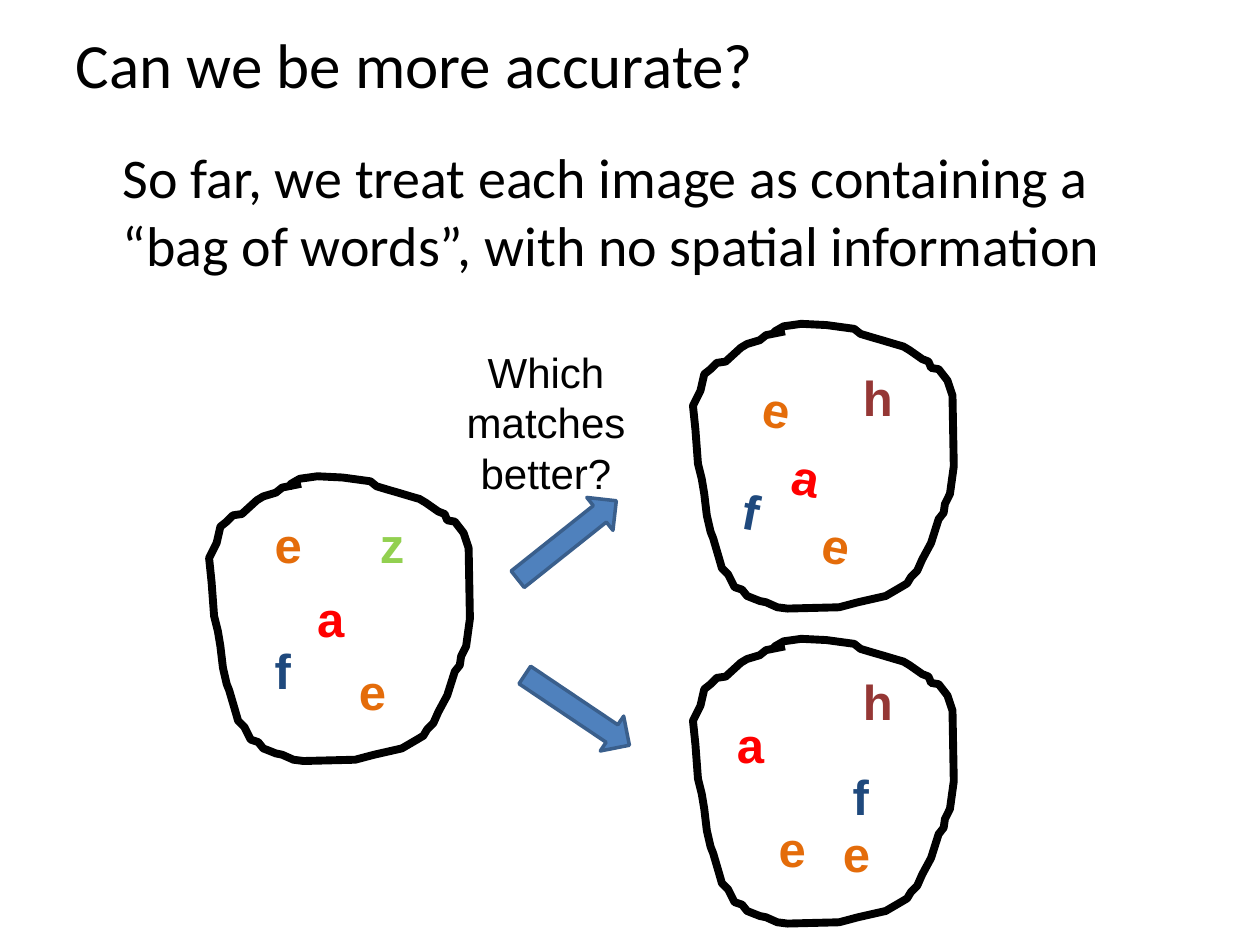
from pptx import Presentation
from pptx.dml.color import RGBColor
from pptx.enum.shapes import MSO_SHAPE
from pptx.enum.text import MSO_ANCHOR, MSO_AUTO_SIZE, PP_ALIGN
from pptx.util import Pt

BLACK = RGBColor(0x00, 0x00, 0x00)
RED = RGBColor(0xFF, 0x00, 0x00)
NAVY = RGBColor(0x1F, 0x49, 0x7D)
GREEN = RGBColor(0x92, 0xD0, 0x50)
ORANGE = RGBColor(0xE4, 0x6C, 0x0A)
MAROON = RGBColor(0x95, 0x37, 0x35)
BLUE = RGBColor(0x4F, 0x81, 0xBD)
BLUE_EDGE = RGBColor(0x3A, 0x5F, 0x8C)

TITLE = "Can we be more accurate?"
BODY = ("So far, we treat each image as containing a “bag of words”, "
        "with no spatial information")
QUESTION = "Which matches better?"

# Visual word: colour, box width
WORDS = {"a": (RED, 30.2), "e": (ORANGE, 30.2), "f": (NAVY, 23.8),
         "h": (MAROON, 31.7), "z": (GREEN, 28.8)}
TILT = 10.9

# Each bag: left, top, then its words as (letter, left, top, rotation)
BAGS = [
    (119.5, 269.3, [("a", 174.2, 332.6, 0), ("f", 149.8, 362.2, 0),
                    ("z", 210, 290.2, 0), ("e", 198, 374.4, 0),
                    ("e", 149.8, 290.2, 0)]),
    (396, 182.2, [("a", 446.4, 252, TILT), ("f", 418.3, 271.4, TILT),
                  ("e", 463.7, 290.9, TILT), ("e", 429.8, 213.1, TILT),
                  ("h", 486, 206.6, 0)]),
    (396, 362.2, [("a", 414, 404.6, 0), ("f", 480.2, 434.2, 0),
                  ("e", 474.5, 467.3, 0), ("e", 437.8, 464.4, 0),
                  ("h", 486, 380.2, 0)]),
]

# Hand-drawn bag outline, in units of OUTLINE_UNIT points
OUTLINE_UNIT = 0.72
OUTLINE = [
    (73, 10), (58, 13), (53, 17), (43, 20), (38, 23), (26, 34), (19, 35),
    (14, 40), (9, 44), (6, 57), (0, 69), (2, 88), (4, 115), (7, 127),
    (9, 139), (11, 156), (14, 169), (16, 174), (21, 191), (23, 198),
    (28, 203), (33, 213), (39, 215), (43, 220), (53, 224), (58, 225),
    (67, 229), (75, 230), (116, 229), (131, 225), (153, 220), (165, 213),
    (170, 210), (173, 205), (178, 200), (182, 191), (189, 178), (195, 159),
    (199, 154), (200, 147), (204, 139), (207, 117), (206, 61), (202, 49),
    (195, 40), (189, 39), (187, 34), (182, 32), (172, 25), (167, 22),
    (160, 20), (150, 17), (143, 15), (133, 12), (128, 8), (106, 5),
    (86, 4), (72, 6), (65, 10), (63, 13),
]

ARROWS = [(288, 296.6, 321.5), (293.8, 393.8, 33.9)]  # left, top, rotation


def place(shape, left, top, width, height):
    box = {"left": left, "top": top, "width": width, "height": height}
    for name, value in box.items():
        setattr(shape, name, Pt(value))


def write(tf, text, font, size, color, bold=False, align=PP_ALIGN.LEFT):
    p = tf.paragraphs[0]
    p.alignment = align
    r = p.add_run()
    r.text = text
    for name, value in {"name": font, "size": Pt(size), "bold": bold}.items():
        setattr(r.font, name, value)
    r.font.color.rgb = color
    return p


def add_text(s, box, text, *style, wrap=False, **options):
    sp = s.shapes.add_textbox(*map(Pt, box))
    sp.text_frame.word_wrap = wrap
    write(sp.text_frame, text, "Arial", *style, **options)
    return sp


def add_bag(s, left, top, words):
    pen = s.shapes.build_freeform(*OUTLINE[0], scale=Pt(OUTLINE_UNIT))
    pen.add_line_segments(OUTLINE[1:], close=False)
    sp = pen.convert_to_shape(Pt(left), Pt(top))
    sp.shadow.inherit = False
    sp.fill.background()
    sp.line.color.rgb = BLACK
    sp.line.width = Pt(4.5)
    for letter, x, y, rotation in words:
        color, width = WORDS[letter]
        height = 34 if rotation else 41
        word = add_text(s, (x, y, width, height), letter, 28, color, bold=True)
        word.rotation = rotation


def add_arrow(s, left, top, rotation):
    sp = s.shapes.add_shape(MSO_SHAPE.RIGHT_ARROW,
                            Pt(left), Pt(top), Pt(72), Pt(24))
    sp.rotation = rotation
    sp.shadow.inherit = False
    sp.fill.solid()
    sp.fill.fore_color.rgb = BLUE
    sp.line.color.rgb = BLUE_EDGE
    sp.line.width = Pt(2)


def main():
    prs = Presentation()
    prs.slide_width, prs.slide_height = Pt(720), Pt(540)
    s = prs.slides.add_slide(prs.slide_layouts[1])

    title, body = s.placeholders
    place(title, 36, 0, 648, 72)
    title.text_frame.vertical_anchor = MSO_ANCHOR.MIDDLE
    write(title.text_frame, TITLE, "Calibri", 36, BLACK)

    place(body, 36, 78, 648, 405)
    body.text_frame.auto_size = MSO_AUTO_SIZE.NONE
    pPr = write(body.text_frame, BODY, "Calibri", 32, BLACK)._p.get_or_add_pPr()
    for name, value in {"marL": Pt(27), "indent": 0}.items():
        pPr.set(name, str(value))
    pPr.insert_element_before(pPr.makeelement(
        "{http://schemas.openxmlformats.org/drawingml/2006/main}buNone"),
        "a:tabLst", "a:defRPr", "a:extLst")

    for bag in BAGS:
        add_bag(s, *bag)
    for arrow in ARROWS:
        add_arrow(s, *arrow)
    add_text(s, (228, 194.4, 168, 94.3), QUESTION, 24, BLACK,
             wrap=True, align=PP_ALIGN.CENTER)

    prs.save("out.pptx")


if __name__ == "__main__":
    main()
